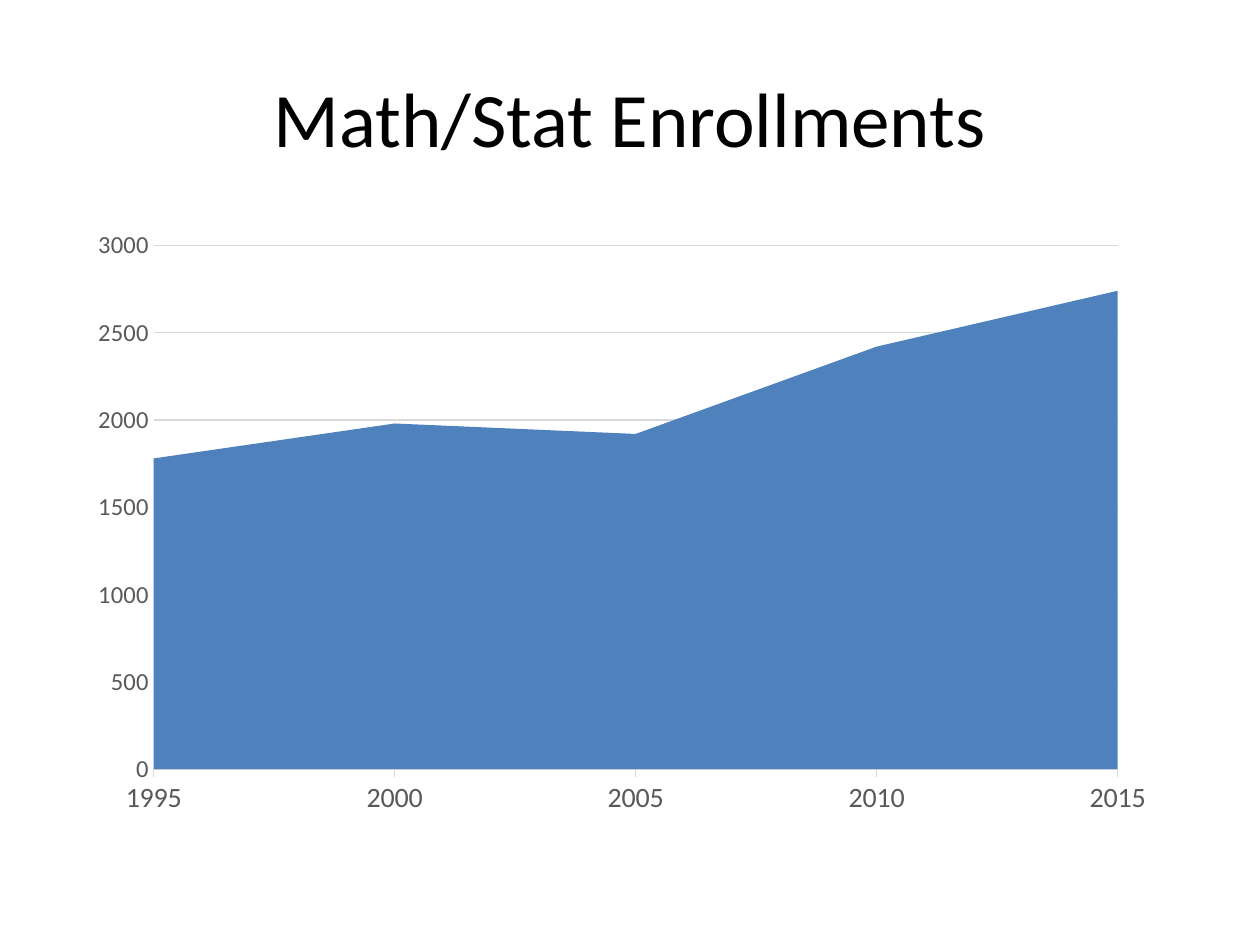
"""Build a slide with an area chart of math and statistics enrollments."""
from lxml.etree import SubElement
from pptx import Presentation
from pptx.chart.data import CategoryChartData as ChartData
from pptx.dml.color import RGBColor
from pptx.enum.chart import XL_CHART_TYPE as ChartType, XL_TICK_MARK as TickMark
from pptx.enum.text import MSO_ANCHOR as Anchor, PP_ALIGN as Align
from pptx.oxml.ns import qn
from pptx.util import Pt

BLACK = RGBColor(0x00, 0x00, 0x00)
GRAY = RGBColor(0x59, 0x59, 0x59)
LIGHT_GRAY = RGBColor(0xD9, 0xD9, 0xD9)
BLUE = RGBColor(0x4F, 0x81, 0xBD)

YEARS = ["1995", "2000", "2005", "2010", "2015"]
ENROLLMENTS = [1780, 1980, 1920, 2420, 2740]
PLOT_LAYOUT = {"layoutTarget": "inner", "xMode": "edge", "yMode": "edge",
               "x": 0.08, "y": 0.04, "w": 0.85, "h": 0.84}


def apply_format(target, values):
    for name, value in values.items():
        setattr(target, name, value)


class SlideBuilder:
    font_name = "Calibri"

    def __init__(self, presentation):
        self.slide = presentation.slides.add_slide(presentation.slide_layouts[5])

    def format_font(self, font, size, color):
        apply_format(font, {"name": self.font_name, "size": Pt(size)})
        font.color.rgb = color

    def format_line(self, line):
        line.color.rgb = LIGHT_GRAY
        line.width = Pt(0.75)

    def add_title(self, text, left, top, width, height):
        shape = self.slide.shapes.title
        apply_format(shape, {"left": Pt(left), "top": Pt(top),
                             "width": Pt(width), "height": Pt(height)})
        shape.text_frame.vertical_anchor = Anchor.MIDDLE
        paragraph = shape.text_frame.paragraphs[0]
        paragraph.alignment = Align.CENTER
        run = paragraph.add_run()
        run.text = text
        self.format_font(run.font, 44, BLACK)

    def format_axis(self, axis, size, tick_mark):
        apply_format(axis, {"major_tick_mark": tick_mark,
                            "minor_tick_mark": TickMark.NONE})
        self.format_font(axis.tick_labels.font, size, GRAY)

    def set_plot_layout(self, chart):
        plot_area = chart._chartSpace.find(".//" + qn("c:plotArea"))
        layout = plot_area.find(qn("c:layout"))
        if layout is None:
            layout = SubElement(plot_area, qn("c:layout"))
            plot_area.insert(0, layout)
        manual_layout = SubElement(layout, qn("c:manualLayout"))
        for name, value in PLOT_LAYOUT.items():
            SubElement(manual_layout, qn(f"c:{name}")).set("val", str(value))

    def add_area_chart(self, categories, values, left, top, width, height):
        data = ChartData()
        data.categories = categories
        data.add_series("Series 1", values)
        chart = self.slide.shapes.add_chart(
            ChartType.AREA_STACKED, Pt(left), Pt(top), Pt(width), Pt(height), data).chart
        apply_format(chart, {"has_legend": False, "has_title": False})
        self.format_font(chart.font, 10, BLACK)
        chart.plots[0].vary_by_categories = False
        fill = chart.plots[0].series[0].format.fill
        fill.solid()
        fill.fore_color.rgb = BLUE

        self.format_axis(chart.category_axis, 16, TickMark.OUTSIDE)
        self.format_line(chart.category_axis.format.line)
        value_axis = chart.value_axis
        self.format_axis(value_axis, 14, TickMark.NONE)
        apply_format(value_axis, {"minimum_scale": 0, "maximum_scale": 3000,
                                  "major_unit": 500, "has_major_gridlines": True})
        value_axis.format.line.fill.background()
        self.format_line(value_axis.major_gridlines.format.line)
        value_axis._element.find(qn("c:crossBetween")).set("val", "midCat")
        self.set_plot_layout(chart)


def main():
    presentation = Presentation()
    apply_format(presentation, {"slide_width": Pt(720), "slide_height": Pt(540)})
    builder = SlideBuilder(presentation)
    builder.add_title("Math/Stat Enrollments", 36, 21.6, 648, 90)
    builder.add_area_chart(YEARS, ENROLLMENTS, 36, 126, 648, 356.4)
    presentation.save("out.pptx")


if __name__ == "__main__":
    main()
